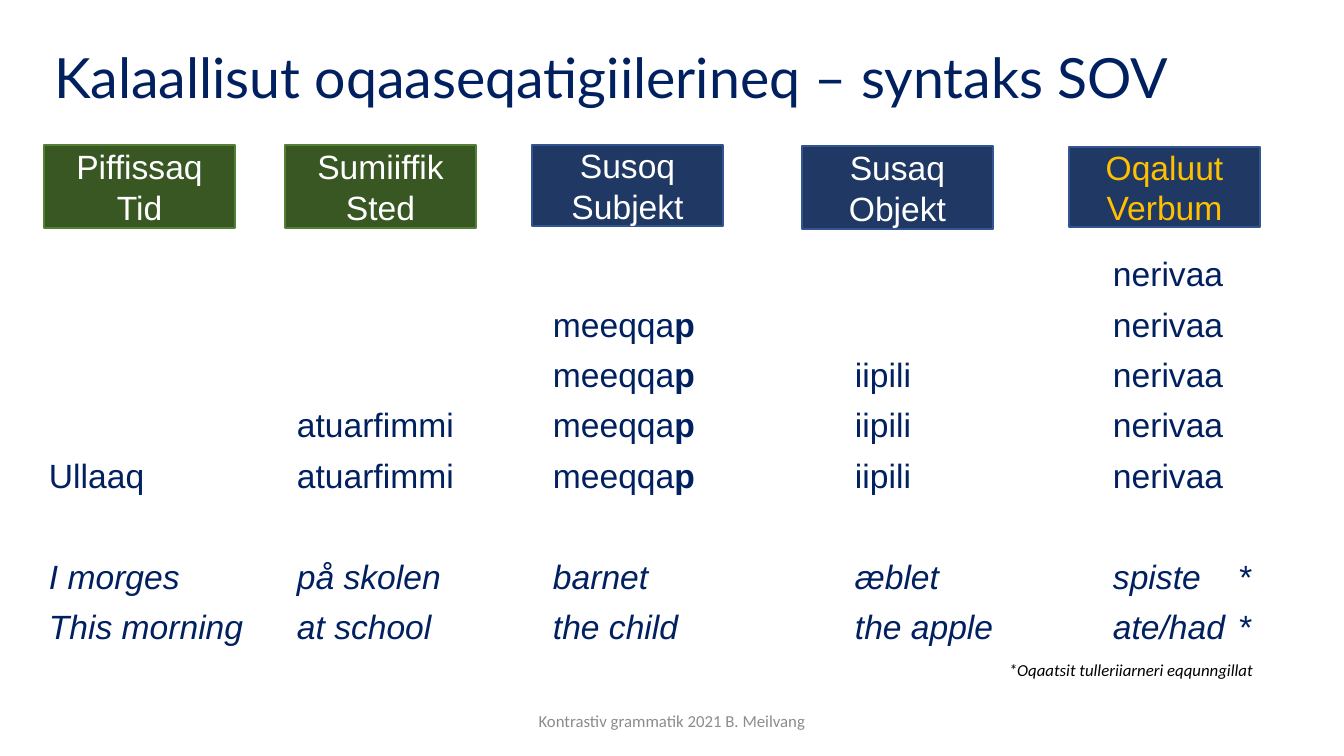
from lxml import etree
from pptx import Presentation
from pptx.dml.color import RGBColor
from pptx.enum.shapes import MSO_SHAPE
from pptx.enum.text import MSO_ANCHOR, MSO_AUTO_SIZE, PP_ALIGN
from pptx.oxml.ns import qn
from pptx.util import Emu, Pt

RECT = MSO_SHAPE.RECTANGLE
MIDDLE, TOP = MSO_ANCHOR.MIDDLE, MSO_ANCHOR.TOP
LEFT, CENTER = PP_ALIGN.LEFT, PP_ALIGN.CENTER
FIXED = MSO_AUTO_SIZE.NONE

NAVY = RGBColor(0x00, 0x20, 0x60)
BLUE = RGBColor(0x20, 0x38, 0x64)
BLUE_EDGE = RGBColor(0x32, 0x54, 0x91)
GREEN = RGBColor(0x38, 0x57, 0x23)
GREEN_EDGE = RGBColor(0x53, 0x80, 0x35)
GOLD = RGBColor(0xFF, 0xC0, 0x00)
WHITE = RGBColor(0xFF, 0xFF, 0xFF)
BLACK = RGBColor(0x00, 0x00, 0x00)
GRAY = RGBColor(0x8C, 0x8C, 0x8C)

ROWS_TOP, ROWS_END = 257, 657
ROWS = 5
LINE, GAP = 26, 10  # points
PITCH = (LINE + GAP) * 1.4  # px

HEADS = (
    ("Piffissaq", "Tid", 44, 145, 83, GREEN, GREEN_EDGE, WHITE),
    ("Sumiiffik", "Sted", 285, 145, 83, GREEN, GREEN_EDGE, WHITE),
    ("Susoq", "Subjekt", 532, 145, 81, BLUE, BLUE_EDGE, WHITE),
    ("Susaq", "Objekt", 802, 146, 83, BLUE, BLUE_EDGE, WHITE),
    ("Oqaluut", "Verbum", 1069, 147, 80, BLUE, BLUE_EDGE, GOLD),
)
# Left, width, stem, bold ending, times shown, glosses
COLUMNS = (
    (49, 220, "Ullaaq", "", 1, ("I morges", "This morning")),
    (297, 220, "atuarfimmi", "", 2, ("på skolen", "at school")),
    (553, 220, "meeqqa", "p", 4, ("barnet", "the child")),
    (855, 220, "iipili", "", 3, ("æblet", "the apple")),
    (1113, 120, "nerivaa", "", 5, ("spiste", "ate/had")),
    (1238, 40, "", "", 0, ("*", "*")),
)


def px(n):
    return Emu(round(n * 914400 / 100.8))


def place(shape, x, y, w, h):
    shape.left, shape.top, shape.width, shape.height = map(px, (x, y, w, h))


def style(par, face, size, color, align=LEFT, italic=False):
    par.alignment = align
    font = par.font
    font.name, font.size, font.italic = face, Pt(size), italic
    font.color.rgb = color


def drop_bullet(par):
    props = par._p.get_or_add_pPr()
    props.set("marL", "0")
    props.set("indent", "0")
    etree.SubElement(props, qn("a:buNone"))


def add_title(slide, text):
    title = slide.shapes.title
    place(title, 44, 40, 1208, 81)
    frame = title.text_frame
    frame.text = text
    frame.vertical_anchor = MIDDLE
    frame.auto_size = FIXED
    par = frame.paragraphs[0]
    par.line_spacing = 0.9
    style(par, "Lato", 39.6, NAVY)


def add_head(slide, top, low, x, y, h, fill, edge, color):
    box = slide.shapes.add_shape(RECT, px(x), px(y), px(191), px(h))
    box.shadow.inherit = False
    box.fill.solid()
    box.fill.fore_color.rgb = fill
    box.line.color.rgb = edge
    box.line.width = Pt(1)
    frame = box.text_frame
    frame.text = f"{top}\n{low}"
    frame.vertical_anchor = MIDDLE
    for par in frame.paragraphs:
        style(par, "Arial", 24, color, CENTER)


def add_column(box, x, w, stem, end, count, glosses):
    """Stack the word and its glosses so that all columns share their rows."""
    skip = ROWS - count if count else ROWS + 1
    top = ROWS_TOP + skip * PITCH
    place(box, x, top, w, ROWS_END - top)
    frame = box.text_frame
    frame.word_wrap = True
    frame.auto_size = FIXED
    frame.vertical_anchor = TOP
    frame.margin_left = frame.margin_right = 0
    frame.margin_top = frame.margin_bottom = 0
    lines = [(stem, end, False)] * count
    lines += [(gloss, "", True) for gloss in glosses]
    for i, (text, bold, italic) in enumerate(lines):
        par = frame.add_paragraph() if i else frame.paragraphs[0]
        drop_bullet(par)
        par.line_spacing = Pt(LINE)
        blank = LINE + GAP if i == count else 0
        par.space_before = Pt(GAP + blank if i else 0)
        style(par, "Arial", 24, NAVY, italic=italic)
        par.add_run().text = text
        if bold:
            run = par.add_run()
            run.text = bold
            run.font.bold = True


def add_columns(slide):
    """Fill the body with the verbs and set the other columns beside it."""
    for column in COLUMNS:
        if column[4] == ROWS:
            box = slide.placeholders[1]
        else:
            box = slide.shapes.add_textbox(0, 0, 0, 0)
        add_column(box, *column)


def add_note(slide, text, x, y, w, h, color, anchor, align, italic):
    box = slide.shapes.add_textbox(px(x), px(y), px(w), px(h))
    frame = box.text_frame
    frame.word_wrap = True
    frame.vertical_anchor = anchor
    frame.text = text
    style(frame.paragraphs[0], "Calibri", 12, color, align, italic)


def main():
    deck = Presentation()
    deck.slide_width, deck.slide_height = px(1344), px(756)
    slide = deck.slides.add_slide(deck.slide_layouts[1])
    add_title(slide, "Kalaallisut oqaaseqatigiilerineq – syntaks SOV")
    add_columns(slide)
    for head in HEADS:
        add_head(slide, *head)
    add_note(slide, "*Oqaatsit tulleriiarneri eqqunngillat",
             999, 655, 280, 30, BLACK, TOP, LEFT, True)
    add_note(slide, "Kontrastiv grammatik 2021 B. Meilvang",
             445, 701, 454, 40, GRAY, MIDDLE, CENTER, False)
    deck.save("out.pptx")


if __name__ == "__main__":
    main()
